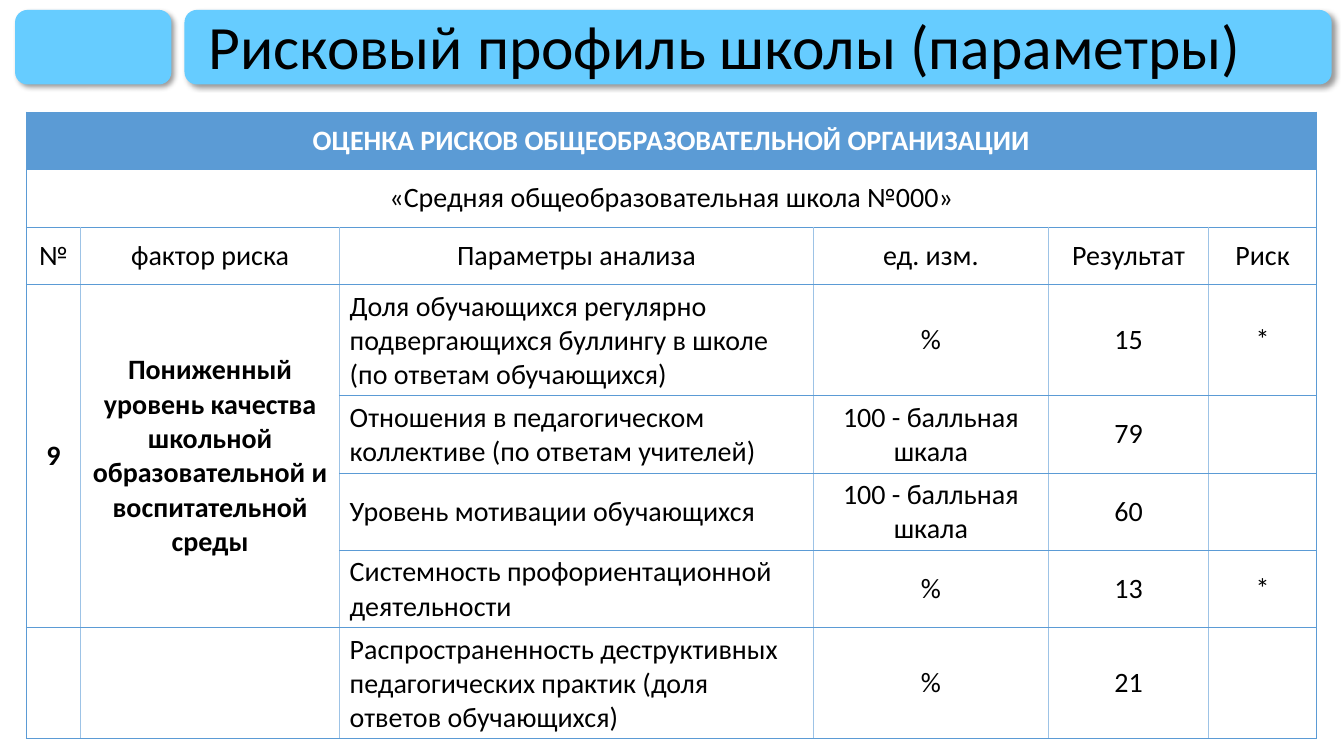
from lxml import etree
from pptx import Presentation
from pptx.dml.color import RGBColor
from pptx.enum.shapes import MSO_SHAPE
from pptx.enum.text import MSO_ANCHOR, PP_ALIGN
from pptx.oxml import parse_xml
from pptx.oxml.ns import qn
from pptx.util import Cm, Pt

ROUND = MSO_SHAPE.ROUNDED_RECTANGLE
MIDDLE = MSO_ANCHOR.MIDDLE
LEFT, CENTER = PP_ALIGN.LEFT, PP_ALIGN.CENTER
SHADOW = (
    '<a:effectLst xmlns:a="http://schemas.openxmlformats.org/drawingml/2006/main">'
    '<a:outerShdw blurRad="50800" dist="38100" dir="2700000" algn="tl">'
    '<a:srgbClr val="000000"><a:alpha val="40000"/></a:srgbClr>'
    '</a:outerShdw></a:effectLst>'
)

WIDTHS = [1.37, 6.53, 11.94, 5.92, 4.04, 2.72]
HEIGHTS = [1.45, 1.45, 1.45, 2.59, 1.8, 1.8, 1.8, 2.59]
SPANS = [(0, 0, 0, 5), (1, 0, 1, 5), (3, 0, 6, 0), (3, 1, 6, 1)]
SCALE = "100 - балльная шкала"
ROWS = [
    ["ОЦЕНКА РИСКОВ ОБЩЕОБРАЗОВАТЕЛЬНОЙ ОРГАНИЗАЦИИ"],
    ["«Средняя общеобразовательная школа №000»"],
    ["№", "фактор риска", "Параметры анализа", "ед. изм.", "Результат", "Риск"],
    ["9", "Пониженный уровень качества школьной образовательной и воспитательной среды",
     "Доля обучающихся регулярно подвергающихся буллингу в школе (по ответам обучающихся)",
     "%", "15", "*"],
    ["", "", "Отношения в педагогическом коллективе (по ответам учителей)", SCALE, "79", ""],
    ["", "", "Уровень мотивации обучающихся", SCALE, "60", ""],
    ["", "", "Системность профориентационной деятельности", "%", "13", "*"],
    ["", "", "Распространенность деструктивных педагогических практик (доля ответов обучающихся)",
     "%", "21", ""],
]


def color(code):
    return RGBColor.from_string(code)


class Deck:
    """Holds the style and the current slide."""

    font = "Calibri"
    sky, blue, pale = "66CCFF", "5B9BD5", "9DC3E6"
    black, white = "000000", "FFFFFF"

    def __init__(self):
        self.prs = Presentation()
        self.prs.slide_width, self.prs.slide_height = Cm(33.87), Cm(19.05)
        self.slide = self.prs.slides.add_slide(self.prs.slide_layouts[6])

    def put(self, frame, text, size, ink, align=LEFT, bold=False):
        para = frame.paragraphs[0]
        para.alignment = align
        run = para.add_run()
        run.text = text
        run.font.name, run.font.size, run.font.bold = self.font, Pt(size), bold
        run.font.color.rgb = color(ink)
        return para

    def bar(self, *box):
        shape = self.slide.shapes.add_shape(ROUND, *map(Cm, box))
        shape.fill.solid()
        shape.fill.fore_color.rgb = color(self.sky)
        shape.line.fill.background()
        shape._element.spPr.append(parse_xml(SHADOW))

    def title(self, text, *box):
        frame = self.slide.shapes.add_textbox(*map(Cm, box)).text_frame
        frame.word_wrap = True
        frame.vertical_anchor = MIDDLE
        self.put(frame, text, 44, self.black).line_spacing = 0.9

    def edge(self, cell, side, ink, width):
        line = etree.SubElement(cell._tc.get_or_add_tcPr(), qn("a:ln" + side), w=str(Pt(width)))
        fill = etree.SubElement(line, qn("a:solidFill"))
        etree.SubElement(fill, qn("a:srgbClr"), val=ink)

    def frame(self, cell, first, last):
        outer, inner = (self.blue, 0.5), (self.pale, 1)
        self.edge(cell, "L", *(outer if first else inner))
        self.edge(cell, "R", *(outer if last else inner))
        self.edge(cell, "T", *outer)
        self.edge(cell, "B", *outer)

    def table(self, left, top):
        table = self.slide.shapes.add_table(
            len(HEIGHTS), len(WIDTHS), Cm(left), Cm(top),
            Cm(sum(WIDTHS)), Cm(sum(HEIGHTS))).table
        table.first_row = table.horz_banding = False
        for col, width in zip(table.columns, WIDTHS):
            col.width = Cm(width)
        for row, height in zip(table.rows, HEIGHTS):
            row.height = Cm(height)
        for r1, c1, r2, c2 in SPANS:
            table.cell(r1, c1).merge(table.cell(r2, c2))
        for r, texts in enumerate(ROWS):
            for c, text in enumerate(texts):
                cell = table.cell(r, c)
                if not cell.is_spanned:
                    self.cell(cell, r, c, text, c == len(texts) - 1)

    def cell(self, cell, r, c, text, last):
        head, body = r == 0, r > 2
        self.frame(cell, c == 0, last)
        cell.vertical_anchor = MIDDLE
        if head:
            cell.fill.solid()
            cell.fill.fore_color.rgb = color(self.blue)
        else:
            cell.fill.background()
        if text:
            self.put(cell.text_frame, text, 20, self.white if head else self.black,
                     LEFT if body and c == 2 else CENTER, head or (body and c < 2))


def main():
    deck = Deck()
    deck.bar(4.65, 0.25, 28.91, 1.88)
    deck.bar(0.38, 0.25, 3.94, 1.88)
    deck.title("Рисковый профиль школы (параметры)", 5, 0.41, 28.19, 1.68)
    deck.table(0.66, 2.82)
    deck.prs.save("out.pptx")


if __name__ == "__main__":
    main()
